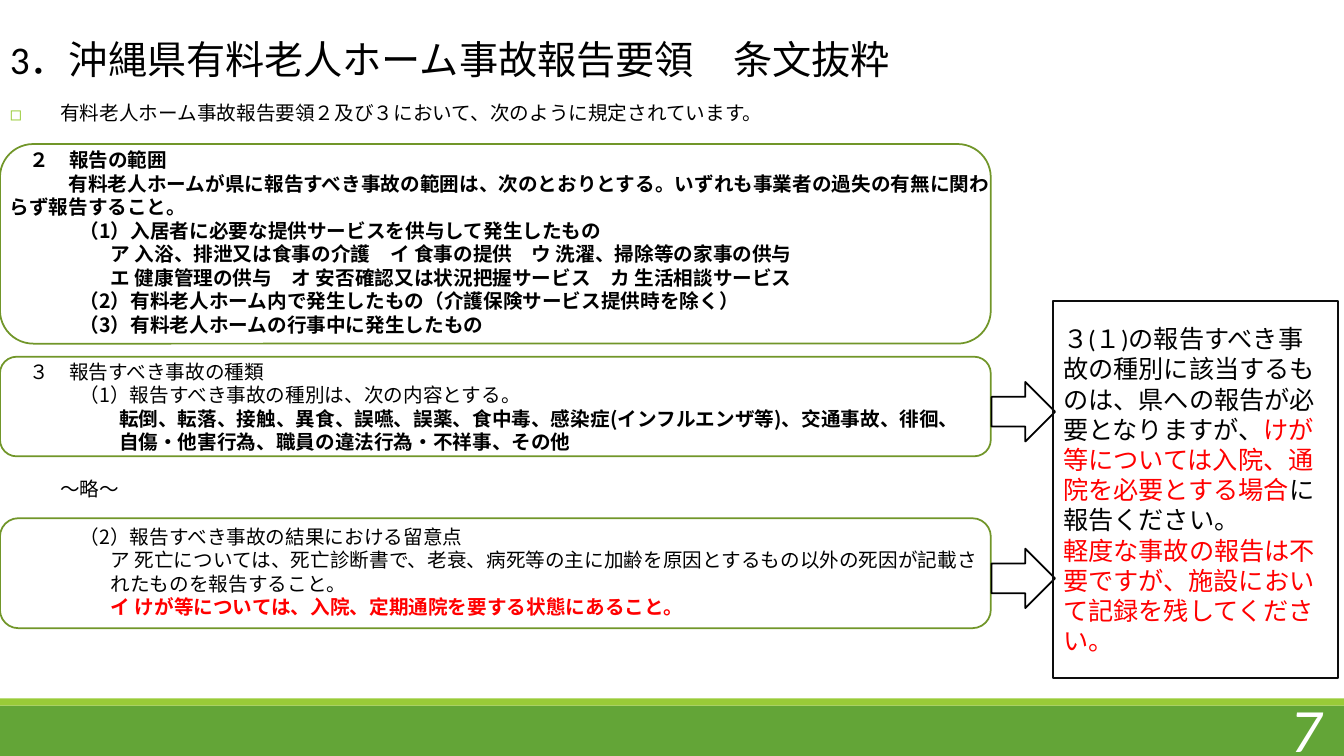
from lxml import etree
from pptx import Presentation
from pptx.dml.color import RGBColor
from pptx.enum.shapes import MSO_SHAPE
from pptx.enum.text import MSO_ANCHOR, MSO_AUTO_SIZE, PP_ALIGN
from pptx.oxml.ns import qn
from pptx.util import Cm, Pt

RECT, ROUNDED, ARROW = MSO_SHAPE.RECTANGLE, MSO_SHAPE.ROUNDED_RECTANGLE, MSO_SHAPE.RIGHT_ARROW
TOP, MIDDLE = MSO_ANCHOR.TOP, MSO_ANCHOR.MIDDLE
LEFT, RIGHT = PP_ALIGN.LEFT, PP_ALIGN.RIGHT
NO_AUTOFIT = MSO_AUTO_SIZE.NONE
LATIN, JAPANESE = "Calibri", "Noto Sans CJK JP"
BLACK, RED, WHITE = "000000", "FF0000", "FFFFFF"
GREEN, LIME, FRAME_GREEN = "63A537", "99CB38", "719629"
SLIDE_W, SLIDE_H = 33.87, 19.05
BODY_PITCH, NOTE_PITCH = 16.83, 21.6

# text, left margin cm, first-line indent cm, blank lines before, bold, colour
ARTICLES = [
    ("有料老人ホーム事故報告要領２及び３において、次のように規定されています。", 1.27, -1.27, 0, False, BLACK),
    ("２　報告の範囲", 0.5, 0, 1, True, BLACK),
    ("有料老人ホームが県に報告すべき事故の範囲は、次のとおりとする。いずれも事業者の過失の有無に関わらず報告すること。",
     0, 1.48, 0, True, BLACK),
    ("（1）入居者に必要な提供サービスを供与して発生したもの", 1.76, 0, 0, True, BLACK),
    ("ア 入浴、排泄又は食事の介護　イ 食事の提供　ウ 洗濯、掃除等の家事の供与", 2.54, 0, 0, True, BLACK),
    ("エ 健康管理の供与　オ 安否確認又は状況把握サービス　カ 生活相談サービス", 2.54, 0, 0, True, BLACK),
    ("（2）有料老人ホーム内で発生したもの（介護保険サービス提供時を除く）", 1.76, 0, 0, True, BLACK),
    ("（3）有料老人ホームの行事中に発生したもの", 1.76, 0, 0, True, BLACK),
    ("３　報告すべき事故の種類", 0.5, 0, 1, False, BLACK),
    ("（1）報告すべき事故の種別は、次の内容とする。", 1.76, 0, 0, False, BLACK),
    ("転倒、転落、接触、異食、誤嚥、誤薬、食中毒、感染症(インフルエンザ等)、交通事故、徘徊、", 2.75, 0, 0, True, BLACK),
    ("自傷・他害行為、職員の違法行為・不祥事、その他", 2.75, 0, 0, True, BLACK),
    ("～略～", 1.27, 0, 1, False, BLACK),
    ("（2）報告すべき事故の結果における留意点", 1.76, 0, 1, False, BLACK),
    ("ア 死亡については、死亡診断書で、老衰、病死等の主に加齢を原因とするもの以外の死因が記載されたものを報告すること。",
     2.54, 0, 0, False, BLACK),
    ("イ けが等については、入院、定期通院を要する状態にあること。", 2.54, 0, 0, True, RED),
]
NOTE = [
    [("３(１)の報告すべき事故の種別に該当するものは、県への報告が必要となりますが、", BLACK),
     ("けが等については入院、通院を必要とする場合", RED), ("に報告ください。", BLACK)],
    [("軽度な事故の報告は不要ですが、施設において記録を残してください。", RED)],
]


def rgb(color):
    """Turn a hex string into a colour."""
    return RGBColor.from_string(color)


def place(shape, box):
    """Move a shape to a box given in centimetres."""
    shape.left, shape.top, shape.width, shape.height = (Cm(length) for length in box)


def prepare(frame, anchor):
    """Set the common frame properties."""
    frame.word_wrap = True
    frame.auto_size = NO_AUTOFIT
    frame.vertical_anchor = anchor
    frame.margin_left = frame.margin_right = Cm(0.25)
    frame.margin_top = frame.margin_bottom = Cm(0.13)


def next_paragraph(frame, index):
    """Return the first paragraph, or add a further one."""
    return frame.paragraphs[0] if index == 0 else frame.add_paragraph()


def add_run(paragraph, text, size, color, latin=JAPANESE, bold=False, italic=False):
    """Add one formatted run."""
    run = paragraph.add_run()
    run.text = text
    font = run.font
    font.size, font.bold, font.italic, font.name = Pt(size), bold, italic, latin
    font.color.rgb = rgb(color)
    east_asian = etree.Element(qn("a:ea"), typeface=JAPANESE)
    font._element.find(qn("a:latin")).addnext(east_asian)


def add_preset(slide, preset, box, fill=None, line=None):
    """Add a preset shape with an optional fill and outline."""
    shape = slide.shapes.add_shape(preset, *(Cm(length) for length in box))
    shape.shadow.inherit = False
    if fill:
        shape.fill.solid()
        shape.fill.fore_color.rgb = rgb(fill)
    else:
        shape.fill.background()
    if line:
        shape.line.color.rgb = rgb(line)
        shape.line.width = Pt(1.25)
    else:
        shape.line.fill.background()
    return shape


def set_bullet(paragraph, symbol):
    """Give a paragraph a lime bullet, or none."""
    properties = paragraph._p.get_or_add_pPr()
    if symbol:
        color = etree.SubElement(properties, qn("a:buClr"))
        etree.SubElement(color, qn("a:srgbClr"), val=LIME)
        etree.SubElement(properties, qn("a:buFont"), typeface=JAPANESE)
        etree.SubElement(properties, qn("a:buChar"), char=symbol)
    else:
        etree.SubElement(properties, qn("a:buNone"))


def fill_title(title, box):
    """Place and write the heading."""
    place(title, box)
    prepare(title.text_frame, MIDDLE)
    heading = title.text_frame.paragraphs[0]
    heading.alignment = LEFT
    add_run(heading, "3．", 28, BLACK, LATIN)
    add_run(heading, "沖縄県有料老人ホーム事故報告要領　条文抜粋", 28, BLACK)


def fill_articles(body, box):
    """Place and write the excerpted articles."""
    place(body, box)
    prepare(body.text_frame, TOP)
    for index, (text, margin, indent, gap, bold, color) in enumerate(ARTICLES):
        article = next_paragraph(body.text_frame, index)
        article.line_spacing = Pt(BODY_PITCH)
        article.space_before, article.space_after = Pt(gap * BODY_PITCH), Pt(0)
        properties = article._p.get_or_add_pPr()
        properties.set("marL", str(Cm(margin)))
        properties.set("indent", str(Cm(indent)))
        set_bullet(article, "◻" if index == 0 else None)
        add_run(article, text, 14, color, bold=bold)


def add_frames(slide, box):
    """Outline the three articles and point from the last two to the note."""
    left, top, width, _ = box
    for offset, height, has_arrow in ((0, 5.03, False), (5.36, 2.51, True), (9.43, 2.77, True)):
        add_preset(slide, ROUNDED, (left, top + offset, width, height), line=FRAME_GREEN)
        if has_arrow:
            arrow_top = top + offset + (height - 1.5) / 2 + 0.13
            add_preset(slide, ARROW, (left + width + 0.02, arrow_top, 1.6, 1.5), line=BLACK)


def add_note(slide, box):
    """Add the boxed reporting note."""
    note = add_preset(slide, RECT, box, line="0D0D0D")
    prepare(note.text_frame, MIDDLE)
    for index, parts in enumerate(NOTE):
        sentence = next_paragraph(note.text_frame, index)
        sentence.alignment = LEFT
        sentence.line_spacing = Pt(NOTE_PITCH)
        for text, color in parts:
            add_run(sentence, text, 18, color, LATIN)


def add_footer(slide, box):
    """Add the green bands and the page number."""
    left, top, width, height = box
    add_preset(slide, RECT, (left, top + 0.18, width, height - 0.18), fill=GREEN)
    add_preset(slide, RECT, (left, top, width, 0.18), fill=LIME)
    number_box = (left + width - 3.95, top + 0.23, 3.63, 1.02)
    number = slide.shapes.add_textbox(*(Cm(length) for length in number_box))
    prepare(number.text_frame, MIDDLE)
    page = number.text_frame.paragraphs[0]
    page.alignment = RIGHT
    add_run(page, "7", 44, WHITE, LATIN, italic=True)


def main():
    """Build and save the slide."""
    deck = Presentation()
    deck.slide_width, deck.slide_height = Cm(SLIDE_W), Cm(SLIDE_H)
    slide = deck.slides.add_slide(deck.slide_layouts[1])
    fill_title(slide.shapes.title, (0, 0.76, SLIDE_W, 1.45))
    fill_articles(slide.placeholders[1], (0, 2.41, 25.27, 13.41))
    add_frames(slide, (0, 3.63, 24.97, 12.2))
    add_note(slide, (26.54, 7.59, 7.19, 9.5))
    add_footer(slide, (0, 17.6, SLIDE_W, 1.45))
    deck.save("out.pptx")


if __name__ == "__main__":
    main()
